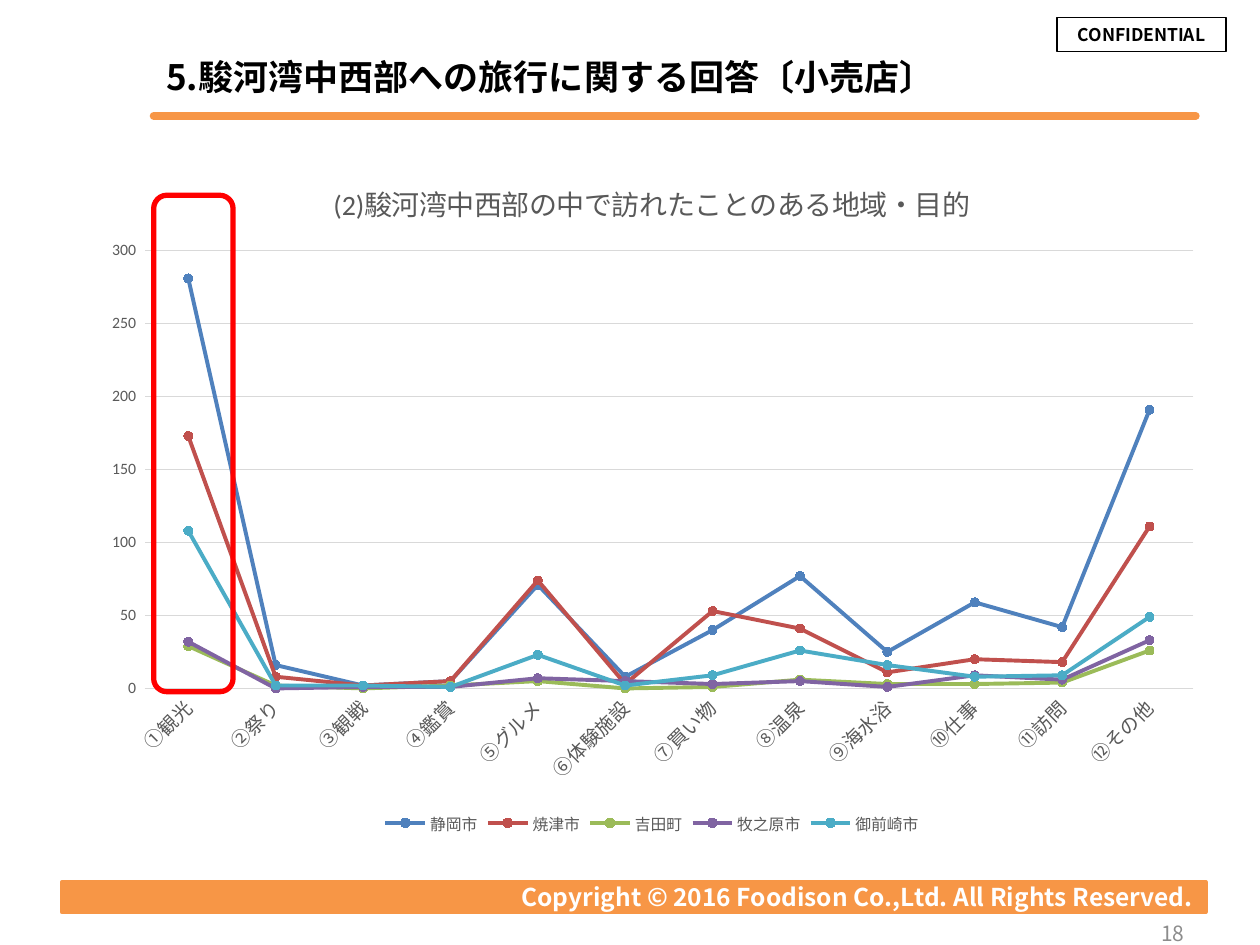
from lxml import etree
from pptx import Presentation
from pptx.chart.data import CategoryChartData
from pptx.dml.color import RGBColor
from pptx.enum.chart import XL_CHART_TYPE, XL_LEGEND_POSITION, XL_MARKER_STYLE, XL_TICK_MARK
from pptx.enum.shapes import MSO_CONNECTOR, MSO_SHAPE
from pptx.enum.text import MSO_ANCHOR, PP_ALIGN
from pptx.oxml import parse_xml
from pptx.oxml.ns import nsdecls, qn
from pptx.util import Inches, Pt

LINE_MARKERS = XL_CHART_TYPE.LINE_MARKERS
LEGEND_BOTTOM = XL_LEGEND_POSITION.BOTTOM
CIRCLE = XL_MARKER_STYLE.CIRCLE
NO_TICK = XL_TICK_MARK.NONE
STRAIGHT = MSO_CONNECTOR.STRAIGHT
RECTANGLE, ROUNDED = MSO_SHAPE.RECTANGLE, MSO_SHAPE.ROUNDED_RECTANGLE
MIDDLE = MSO_ANCHOR.MIDDLE
LEFT, CENTER, RIGHT = PP_ALIGN.LEFT, PP_ALIGN.CENTER, PP_ALIGN.RIGHT

TEXT_FONT, CHART_FONT = "Noto Sans CJK JP", "Calibri"
ORANGE, GRAY, GRID, BLACK, WHITE = "F79646", "595959", "D9D9D9", "000000", "FFFFFF"

CATEGORIES = ["①観光", "②祭り", "③観戦", "④鑑賞", "⑤グルメ", "⑥体験施設",
              "⑦買い物", "⑧温泉", "⑨海水浴", "⑩仕事", "⑪訪問", "⑫その他"]
CITIES = [
    ("静岡市", "4F81BD", [281, 16, 2, 5, 71, 8, 40, 77, 25, 59, 42, 191]),
    ("焼津市", "C0504D", [173, 8, 2, 5, 74, 3, 53, 41, 11, 20, 18, 111]),
    ("吉田町", "9BBB59", [29, 2, 0, 2, 5, 0, 1, 6, 3, 3, 4, 26]),
    ("牧之原市", "8064A2", [32, 0, 1, 1, 7, 5, 3, 5, 1, 9, 6, 33]),
    ("御前崎市", "4BACC6", [108, 2, 2, 1, 23, 2, 9, 26, 16, 8, 9, 49]),
]


def color(value):
    return RGBColor.from_string(value)


def inches(box):
    return [Inches(length) for length in box]


def style_font(font, size, tint, name=CHART_FONT, bold=False):
    font.size, font.name, font.bold = Pt(size), name, bold
    font.color.rgb = color(tint)


def style_line(line, tint, width):
    line.color.rgb = color(tint)
    line.width = Pt(width)


def write(frame, text, size, tint, align, bold=True):
    frame.word_wrap = True
    frame.vertical_anchor = MIDDLE
    para = frame.paragraphs[0]
    para.alignment = align
    span = para.add_run()
    span.text = text
    style_font(span.font, size, tint, TEXT_FONT, bold)
    east_asian = etree.SubElement(span.font._element, qn("a:ea"))
    east_asian.set("typeface", TEXT_FONT)


def add_outline(page, kind, box, tint, width, fill=None):
    shape = page.shapes.add_shape(kind, *inches(box))
    shape.shadow.inherit = False
    if fill:
        shape.fill.solid()
        shape.fill.fore_color.rgb = color(fill)
    else:
        shape.fill.background()
    style_line(shape.line, tint, width)
    return shape


def add_header(page, box):
    left, top, width, height = box
    title = page.shapes.title
    title.left, title.top, title.width, title.height = inches(box)
    write(title.text_frame, "5.駿河湾中西部への旅行に関する回答〔小売店〕", 20, BLACK, LEFT)
    # Rule below the title
    bottom = Inches(top + height + 0.01)
    rule = page.shapes.add_connector(STRAIGHT, Inches(left), bottom, Inches(left + 8.27), bottom)
    style_line(rule.line, ORANGE, 4.5)
    rule.line._get_or_add_ln().set("cap", "rnd")
    etree.SubElement(rule._element.spPr, qn("a:effectLst"))
    # Confidentiality stamp
    stamp = add_outline(page, RECTANGLE, (8.39, 0.14, 1.34, 0.27), BLACK, 0.75)
    write(stamp.text_frame, "CONFIDENTIAL", 10, BLACK, CENTER)


def add_footer(page, box):
    left, top, width, height = box
    band = add_outline(page, RECTANGLE, box, ORANGE, 2, ORANGE)
    write(band.text_frame, "Copyright © 2016 Foodison Co.,Ltd. All Rights Reserved.", 14, WHITE, RIGHT)
    # Page number
    number = page.shapes.add_textbox(*inches((7.17, top + 0.21, 2.33, 0.4)))
    write(number.text_frame, "18", 12, "8C8C8C", RIGHT, False)


def style_axes(chart):
    categories, values = chart.category_axis, chart.value_axis
    for axis, size in ((categories, 11), (values, 9)):
        axis.major_tick_mark = axis.minor_tick_mark = NO_TICK
        style_font(axis.tick_labels.font, size, GRAY)
    style_line(categories.format.line, GRID, 0.75)
    categories.tick_labels.font._element.getparent().getparent().getparent().find(
        qn("a:bodyPr")).set("rot", "-2700000")
    values.format.line.fill.background()
    values.minimum_scale, values.maximum_scale, values.major_unit = 0, 300, 50
    style_line(values.major_gridlines.format.line, GRID, 0.75)
    values.tick_labels.number_format = r"0_);[Red]\(0\)"
    values.tick_labels.number_format_is_linked = False


def place_plot(chart, x, y, width, height):
    plot_area = chart._chartSpace.chart.plotArea
    for layout in plot_area.findall(qn("c:layout")):
        plot_area.remove(layout)
    plot_area.insert(0, parse_xml(
        f'<c:layout {nsdecls("c")}><c:manualLayout><c:layoutTarget val="inner"/>'
        f'<c:xMode val="edge"/><c:yMode val="edge"/><c:x val="{x}"/><c:y val="{y}"/>'
        f'<c:w val="{width}"/><c:h val="{height}"/></c:manualLayout></c:layout>'))


def add_visit_chart(page, box):
    data = CategoryChartData()
    data.categories = CATEGORIES
    for name, tint, visits in CITIES:
        data.add_series(name, visits)
    chart = page.shapes.add_chart(LINE_MARKERS, *inches(box), data).chart
    style_font(chart.font, 10, BLACK)
    # Chart title
    chart.has_title = True
    chart.chart_title.include_in_layout = False
    span = chart.chart_title.text_frame.paragraphs[0].add_run()
    span.text = "(2)駿河湾中西部の中で訪れたことのある地域・目的"
    style_font(span.font, 16, GRAY)
    # Axes, plot area and legend
    style_axes(chart)
    place_plot(chart, 0.05, 0.14, 0.93, 0.64)
    chart.has_legend = True
    chart.legend.position = LEGEND_BOTTOM
    chart.legend.include_in_layout = False
    style_font(chart.legend.font, 9, GRAY)
    # One line for each city
    chart.plots[0].vary_by_categories = False
    for series, (name, tint, visits) in zip(chart.plots[0].series, CITIES):
        series.smooth = False
        style_line(series.format.line, tint, 2.25)
        marker = series.marker
        marker.style, marker.size = CIRCLE, 5
        marker.format.fill.solid()
        marker.format.fill.fore_color.rgb = color(tint)
        style_line(marker.format.line, tint, 0.75)


def main():
    deck = Presentation()
    deck.slide_width, deck.slide_height = Inches(10), Inches(7.5)
    page = deck.slides.add_slide(deck.slide_layouts[5])
    add_header(page, (1.22, 0.3, 8.28, 0.61))
    add_footer(page, (0.49, 7, 9.08, 0.24))
    add_visit_chart(page, (0.7, 1.23, 8.95, 5.43))
    # Highlight around the sightseeing category
    add_outline(page, ROUNDED, (1.22, 1.55, 0.63, 3.94), "FF0000", 3)
    deck.save("out.pptx")


if __name__ == "__main__":
    main()
